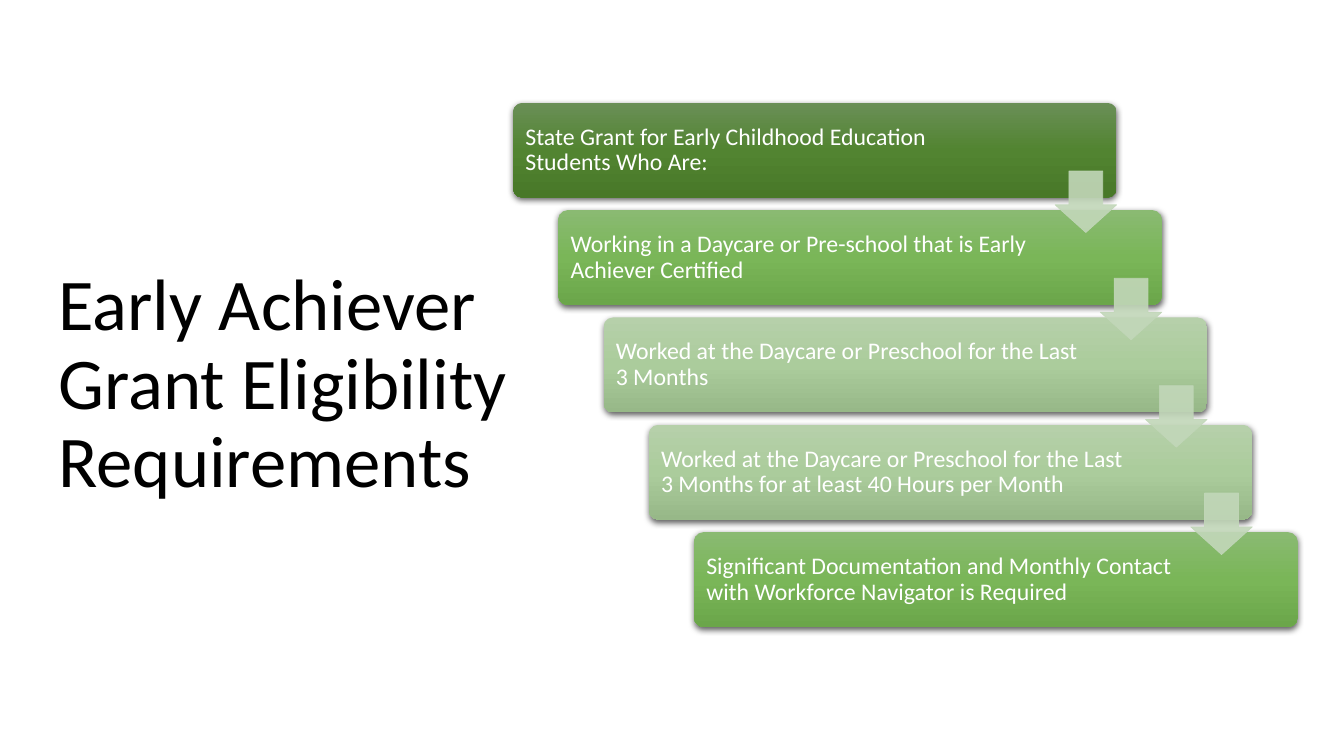
from lxml import etree
from pptx import Presentation
from pptx import util as u
from pptx.dml.color import RGBColor
from pptx.enum import shapes, text
from pptx.oxml import ns

COLORS = {"title": "000000", "label": "FFFFFF", "arrow": "C2D7B9", "shadow": "000000"}
GRADIENTS = {
    "dark": ("6A8F57", "528431", "487828"),
    "medium": ("8ABA72", "7AB658", "6BA64A"),
    "light": ("B6D0AA", "ABCC9C", "97B888"),
}
STEPS = [
    ("State Grant for Early Childhood Education Students Who Are:", "dark"),
    ("Working in a Daycare or Pre-school that is Early Achiever Certified", "medium"),
    ("Worked at the Daycare or Preschool for the Last 3 Months", "light"),
    ("Worked at the Daycare or Preschool for the Last 3 Months "
     "for at least 40 Hours per Month", "light"),
    ("Significant Documentation and Monthly Contact with Workforce Navigator "
     "is Required", "medium"),
]

# Staircase geometry in centimetres
BOX_LEFT, BOX_TOP, BOX_WIDTH, BOX_HEIGHT = 12.93, 2.59, 15.21, 2.39
ARROW_LEFT, ARROW_TOP, ARROW_SIZE = 26.59, 4.31, 1.55
STEP_X, STEP_Y = 1.14, 2.705

TITLE_FRAME = {"vertical_anchor": text.MSO_ANCHOR.MIDDLE, "word_wrap": True,
               "auto_size": text.MSO_AUTO_SIZE.NONE}
LABEL_FRAME = {**TITLE_FRAME, "margin_left": u.Cm(0.24), "margin_right": u.Cm(2.95),
               "margin_top": u.Cm(0.25), "margin_bottom": u.Cm(0.25)}
PARAGRAPH = {"alignment": text.PP_ALIGN.LEFT, "line_spacing": 0.9}


def apply(target, values):
    for name, value in values.items():
        setattr(target, name, value)


def write_text(shape, wording, size, color, frame_format):
    frame = shape.text_frame
    apply(frame, frame_format)
    para = frame.paragraphs[0]
    apply(para, PARAGRAPH)
    span = para.add_run()
    span.text = wording
    apply(span.font, {"name": "Calibri", "size": u.Pt(size)})
    span.font.color.rgb = RGBColor.from_string(COLORS[color])


def add_child(parent, tag, **attributes):
    child = etree.SubElement(parent, ns.qn(tag))
    for name, value in attributes.items():
        child.set(name, str(value))
    return child


def set_gradient(shape, colors):
    """Fill from top to bottom with evenly spaced colours."""
    shape.fill.gradient()
    shape.fill.gradient_angle = 270
    stops = shape.element.spPr.find(ns.qn("a:gradFill")).find(ns.qn("a:gsLst"))
    for stop in list(stops):
        stops.remove(stop)
    for index, color in enumerate(colors):
        stop = add_child(stops, "a:gs", pos=index * 50000)
        add_child(stop, "a:srgbClr", val=color)


def set_shadow(shape):
    shape.shadow.inherit = False
    effects = shape.element.spPr.find(ns.qn("a:effectLst"))
    shadow = add_child(effects, "a:outerShdw", blurRad=u.Pt(4.5), dist=u.Pt(1.5),
                       dir=5400000, algn="ctr", rotWithShape=0)
    color = add_child(shadow, "a:srgbClr", val=COLORS["shadow"])
    add_child(color, "a:alpha", val=63000)


def add_step(page, index, wording, gradient):
    box = page.shapes.add_shape(
        shapes.MSO_SHAPE.ROUNDED_RECTANGLE,
        u.Cm(BOX_LEFT + index * STEP_X), u.Cm(BOX_TOP + index * STEP_Y),
        u.Cm(BOX_WIDTH), u.Cm(BOX_HEIGHT))
    box.adjustments[0] = 0.1
    set_gradient(box, GRADIENTS[gradient])
    box.line.fill.background()
    set_shadow(box)
    write_text(box, wording, 17, "label", LABEL_FRAME)


def add_arrow(page, index):
    arrow = page.shapes.add_shape(
        shapes.MSO_SHAPE.DOWN_ARROW,
        u.Cm(ARROW_LEFT + index * STEP_X), u.Cm(ARROW_TOP + index * STEP_Y),
        u.Cm(ARROW_SIZE), u.Cm(ARROW_SIZE))
    arrow.adjustments[0], arrow.adjustments[1] = 0.55, 0.45
    arrow.shadow.inherit = False
    arrow.line.width = u.Pt(0.5)
    for fill in (arrow.fill, arrow.line.fill):
        fill.solid()
        fill.fore_color.rgb = RGBColor.from_string(COLORS["arrow"])
    for color in arrow.element.spPr.iter(ns.qn("a:srgbClr")):
        add_child(color, "a:alpha", val=90000)


def main():
    deck = Presentation()
    apply(deck, {"slide_width": u.Cm(33.87), "slide_height": u.Cm(19.05)})
    page = deck.slides.add_slide(deck.slide_layouts[5])

    # Title
    title = page.shapes.title
    apply(title, {"left": u.Cm(1.22), "top": u.Cm(2.39),
                  "width": u.Cm(12.67), "height": u.Cm(14.66)})
    write_text(title, "Early Achiever Grant Eligibility Requirements", 52,
               "title", TITLE_FRAME)

    # Requirement steps, then the arrows that overlap them
    for index, (wording, gradient) in enumerate(STEPS):
        add_step(page, index, wording, gradient)
    for index in range(len(STEPS) - 1):
        add_arrow(page, index)

    deck.save("out.pptx")


if __name__ == "__main__":
    main()
